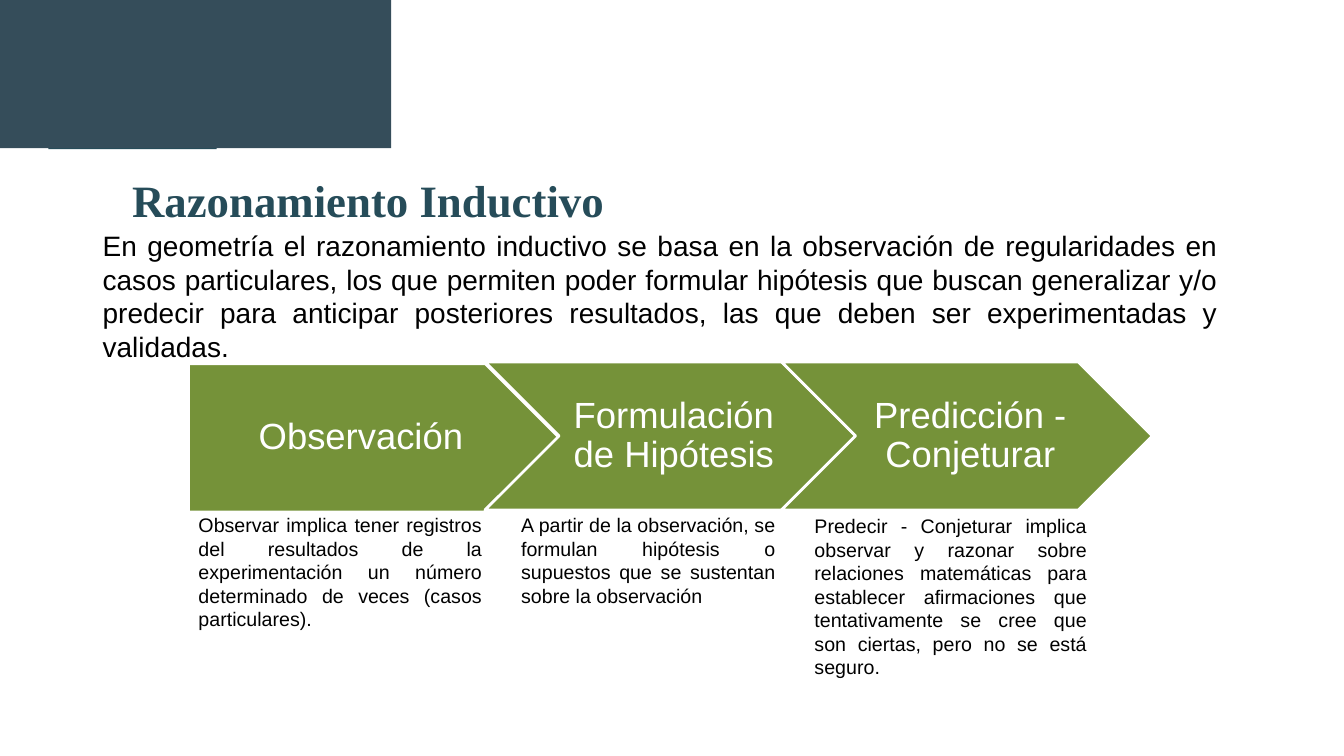
from pptx import Presentation
from pptx.dml.color import RGBColor
from pptx.enum.shapes import MSO_SHAPE
from pptx.enum.text import MSO_ANCHOR, PP_ALIGN
from pptx.util import Emu, Pt

PX = 9144
TEAL = RGBColor(0x26, 0x4C, 0x59)
SLATE = RGBColor(0x35, 0x4D, 0x5A)
GREEN = RGBColor(0x75, 0x92, 0x39)
WHITE = RGBColor(0xFF, 0xFF, 0xFF)
BLACK = RGBColor(0x00, 0x00, 0x00)

INTRO = (
    "En geometría el razonamiento inductivo se basa en la observación de "
    "regularidades en casos particulares, los que permiten poder formular "
    "hipótesis que buscan generalizar y/o predecir para anticipar posteriores "
    "resultados, las que deben ser experimentadas y validadas."
)
STEPS = [
    (MSO_SHAPE.PENTAGON, 361, "Observación", 15),
    (MSO_SHAPE.CHEVRON, 359, "Formulación de Hipótesis", 11),
    (MSO_SHAPE.CHEVRON, 359, "Predicción - Conjeturar", 11),
]
DETAILS = [
    ((187, 504, 301, 128),
     "Observar implica tener registros del resultados de la experimentación "
     "un número determinado de veces (casos particulares)."),
    ((507, 504, 272, 104),
     "A partir de la observación, se formulan hipótesis o supuestos que se "
     "sustentan sobre la observación"),
    ((798, 505, 290, 175),
     "Predecir - Conjeturar implica observar y razonar sobre relaciones "
     "matemáticas para establecer afirmaciones que tentativamente se cree "
     "que son ciertas, pero no se está seguro."),
]


def px(*lengths):
    return [Emu(n * PX) for n in lengths]


def write(sp, text, size, color, align, insets, spacing=1.0, font="Arial", bold=False):
    tf = sp.text_frame
    tf.text = text
    tf.word_wrap = True
    tf.margin_left, tf.margin_top, tf.margin_right, tf.margin_bottom = px(*insets)
    p = tf.paragraphs[0]
    p.alignment = align
    p.line_spacing = spacing
    r = p.runs[0]
    r.font.name = font
    r.font.size = Pt(size)
    r.font.bold = bold
    r.font.color.rgb = color


def add_paragraph_box(s, box, text, size, color=BLACK, left=10, **style):
    sp = s.shapes.add_textbox(*px(*box))
    write(sp, text, size, color, PP_ALIGN.JUSTIFY, (left, 5, 10, 5), **style)


def add_block(s, kind, box, fill):
    sp = s.shapes.add_shape(kind, *px(*box))
    sp.shadow.inherit = False
    sp.fill.solid()
    sp.fill.fore_color.rgb = fill
    sp.line.fill.background()
    return sp


def add_step(s, kind, box, text, left):
    sp = add_block(s, kind, box, GREEN)
    sp.adjustments[0] = 0.5
    sp.line.color.rgb = WHITE
    sp.line.width = Pt(2)
    write(sp, text, 26, WHITE, PP_ALIGN.CENTER, (left, 8, 4, 8), spacing=0.9)
    sp.text_frame.vertical_anchor = MSO_ANCHOR.MIDDLE


def main():
    prs = Presentation()
    prs.slide_width, prs.slide_height = px(1333, 750)
    s = prs.slides.add_slide(prs.slide_layouts[6])

    add_block(s, MSO_SHAPE.RECTANGLE, (48, 81, 167, 67), TEAL)
    add_block(s, MSO_SHAPE.RECTANGLE, (0, 0, 388, 147), SLATE)
    add_paragraph_box(s, (115, 162, 1071, 68), "Razonamiento Inductivo", 32, TEAL,
                      left=16, spacing=1.08, font="Times New Roman", bold=True)
    add_paragraph_box(s, (92, 222, 1126, 145), INTRO, 20)

    for i, (kind, top, text, left) in enumerate(STEPS):
        add_step(s, kind, (187 + 294 * i, top, 368, 147), text, left)
    for box, text in DETAILS:
        add_paragraph_box(s, box, text, 14)

    prs.save("out.pptx")


if __name__ == "__main__":
    main()
